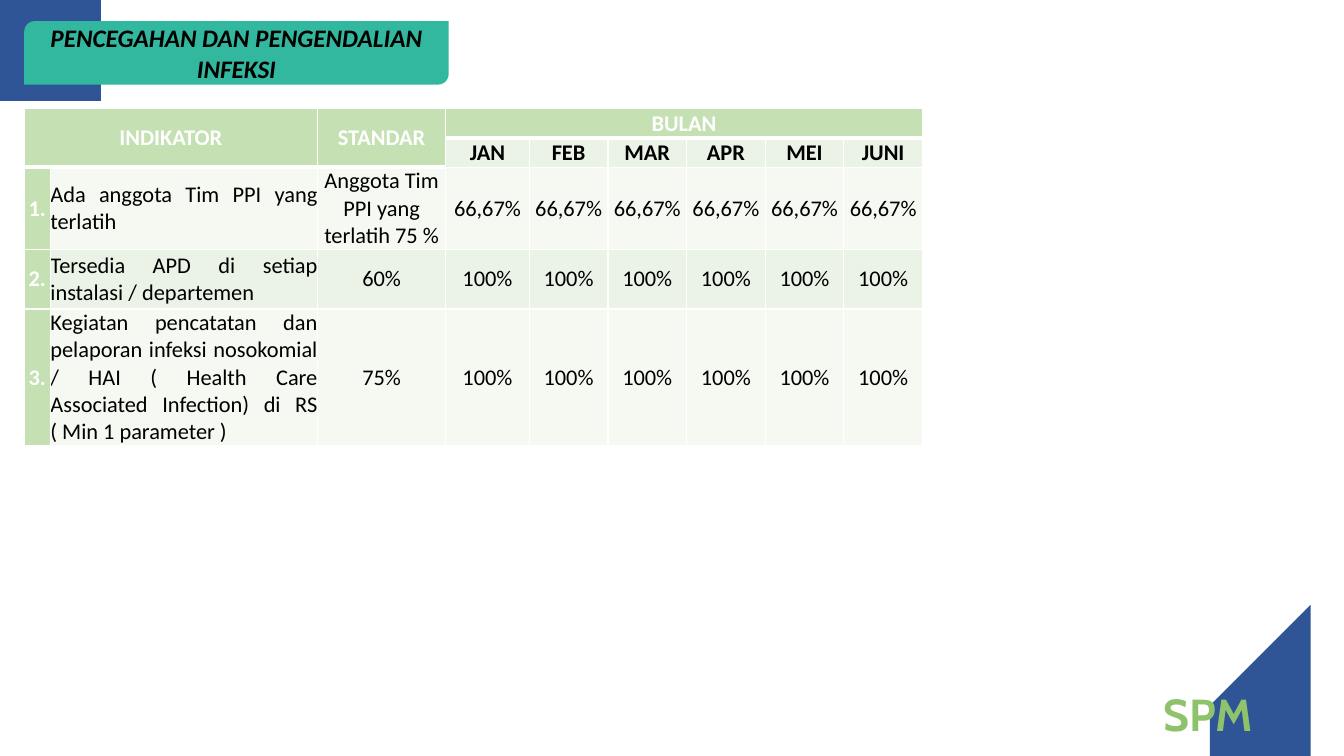
from lxml import etree
from pptx import Presentation
from pptx.dml.color import RGBColor
from pptx.enum.shapes import MSO_SHAPE
from pptx.enum.text import MSO_ANCHOR, PP_ALIGN
from pptx.oxml.ns import qn
from pptx.util import Inches, Pt

CENTER, JUSTIFY, LEFT = PP_ALIGN.CENTER, PP_ALIGN.JUSTIFY, PP_ALIGN.LEFT
MIDDLE = MSO_ANCHOR.MIDDLE
TITLE_SHAPE = MSO_SHAPE.ROUND_2_DIAG_RECTANGLE

BLUE, TEAL, LIME = "2F5597", "32B89E", "8EC36B"
HEADER_GREEN, BAND_DARK, BAND_LIGHT = "C5E0B3", "EAF3E5", "F5F9F2"
WHITE, BLACK = "FFFFFF", "000000"

TITLE = "PENCEGAHAN DAN PENGENDALIAN INFEKSI"
MONTHS = ["JAN", "FEB", "MAR", "APR", "MEI", "JUNI"]
INDICATORS = [
    ("Ada anggota Tim PPI yang terlatih",
     "Anggota Tim PPI yang terlatih 75 %", ["66,67%"] * 6),
    ("Tersedia APD di setiap instalasi / departemen", "60%", ["100%"] * 6),
    ("Kegiatan pencatatan dan pelaporan infeksi nosokomial / HAI "
     "( Health Care Associated Infection) di RS ( Min 1 parameter )",
     "75%", ["100%"] * 6),
]
COLUMN_WIDTHS = [0.26, 2.65, 1.27, 0.83] + [0.78] * 5
ROW_HEIGHTS = [0.29, 0.29, 0.77, 0.59, 1.18]
# Header text, first row, first column, last row, last column
HEADERS = [("INDIKATOR", 0, 0, 1, 1), ("STANDAR", 0, 2, 1, 2), ("BULAN", 0, 3, 0, 8)]

# Corner outlines: a two-value point is a line, a six-value point is a curve
CORNERS = [
    [(13.33, 7.5), (12.11, 7.5), (12.04, 7.36),
     (11.9, 7.06, 12.03, 6.69, 12.34, 6.55), (13.33, 6.09)],
    [(0, 0), (1.22, 0), (1.29, 0.15),
     (1.43, 0.46, 1.29, 0.83, 0.99, 0.97), (0, 1.42)],
]
CURVE_STEPS = 24


def color(hex_value):
    return RGBColor.from_string(hex_value)


def write(text_frame, text, size, hex_value, align=CENTER, bold=False,
          italic=False, font_name="Calibri"):
    text_frame.text = text
    paragraph = text_frame.paragraphs[0]
    paragraph.alignment = align
    font = paragraph.runs[0].font
    font.name, font.size = font_name, Pt(size)
    font.bold, font.italic = bold, italic
    font.color.rgb = color(hex_value)


def paint(shape, hex_value):
    shape.shadow.inherit = False
    shape.fill.solid()
    shape.fill.fore_color.rgb = color(hex_value)
    shape.line.fill.background()


def flatten(outline):
    """Turn an outline with cubic curves into a list of points."""
    points = []
    for step in outline:
        if len(step) == 2:
            points.append(step)
            continue
        controls = [points[-1], step[:2], step[2:4], step[4:]]
        for index in range(1, CURVE_STEPS + 1):
            t = index / CURVE_STEPS
            weights = [(1 - t) ** 3, 3 * t * (1 - t) ** 2, 3 * t * t * (1 - t), t ** 3]
            points.append(tuple(
                sum(weight * control[axis] for weight, control in zip(weights, controls))
                for axis in (0, 1)))
    return points


def add_corner(slide, outline):
    start, *rest = flatten(outline)
    builder = slide.shapes.build_freeform(*start, scale=Inches(1))
    builder.add_line_segments(rest, close=True)
    paint(builder.convert_to_shape(), BLUE)


def style_cell(cell, fill, bottom_width=1):
    cell.margin_left = cell.margin_right = cell.margin_top = cell.margin_bottom = 0
    cell.vertical_anchor = MIDDLE
    cell.fill.solid()
    cell.fill.fore_color.rgb = color(fill)
    properties = cell._tc.get_or_add_tcPr()
    widths = {"lnL": 1, "lnR": 1, "lnT": 1, "lnB": bottom_width}
    for position, (side, width) in enumerate(widths.items()):
        border = etree.Element(qn(f"a:{side}"), w=str(Pt(width)))
        border_fill = etree.SubElement(border, qn("a:solidFill"))
        etree.SubElement(border_fill, qn("a:srgbClr"), val=WHITE)
        properties.insert(position, border)


def add_indicator_table(slide):
    table = slide.shapes.add_table(
        len(ROW_HEIGHTS), len(COLUMN_WIDTHS), Inches(0.24), Inches(1.08),
        Inches(sum(COLUMN_WIDTHS)), Inches(sum(ROW_HEIGHTS))).table
    for column, width in zip(table.columns, COLUMN_WIDTHS):
        column.width = Inches(width)
    for row, height in zip(table.rows, ROW_HEIGHTS):
        row.height = Inches(height)

    for text, top, left, bottom, right in HEADERS:
        for row in range(top, bottom + 1):
            for column in range(left, right + 1):
                style_cell(table.cell(row, column), HEADER_GREEN, bottom_width=3)
        table.cell(top, left).merge(table.cell(bottom, right))
        write(table.cell(top, left).text_frame, text, 16, WHITE, bold=True)

    for column, month in enumerate(MONTHS, start=3):
        cell = table.cell(1, column)
        style_cell(cell, BAND_DARK)
        write(cell.text_frame, month, 16, BLACK, bold=True)

    for number, (indicator, standard, values) in enumerate(INDICATORS, start=1):
        band = BAND_LIGHT if number % 2 else BAND_DARK
        for column, text in enumerate([f"{number}.", indicator, standard, *values]):
            cell = table.cell(number + 1, column)
            is_number = column == 0
            style_cell(cell, HEADER_GREEN if is_number else band)
            write(cell.text_frame, text, 16, WHITE if is_number else BLACK,
                  align=JUSTIFY if column == 1 else CENTER, bold=is_number)


def main():
    presentation = Presentation()
    presentation.slide_width, presentation.slide_height = Inches(13.33), Inches(7.5)
    slide = presentation.slides.add_slide(presentation.slide_layouts[6])

    for outline in CORNERS:
        add_corner(slide, outline)
    add_indicator_table(slide)

    title = slide.shapes.add_shape(
        TITLE_SHAPE, Inches(0.24), Inches(0.21), Inches(4.21), Inches(0.63))
    paint(title, TEAL)
    title.text_frame.vertical_anchor = MIDDLE
    write(title.text_frame, TITLE, 18, BLACK, bold=True, italic=True)

    label = slide.shapes.add_textbox(
        Inches(11.44), Inches(6.76), Inches(1.18), Inches(0.64))
    label.text_frame.word_wrap = True
    write(label.text_frame, "SPM", 32, LIME, align=LEFT, bold=True, font_name="Cabin")

    presentation.save("out.pptx")


if __name__ == "__main__":
    main()
